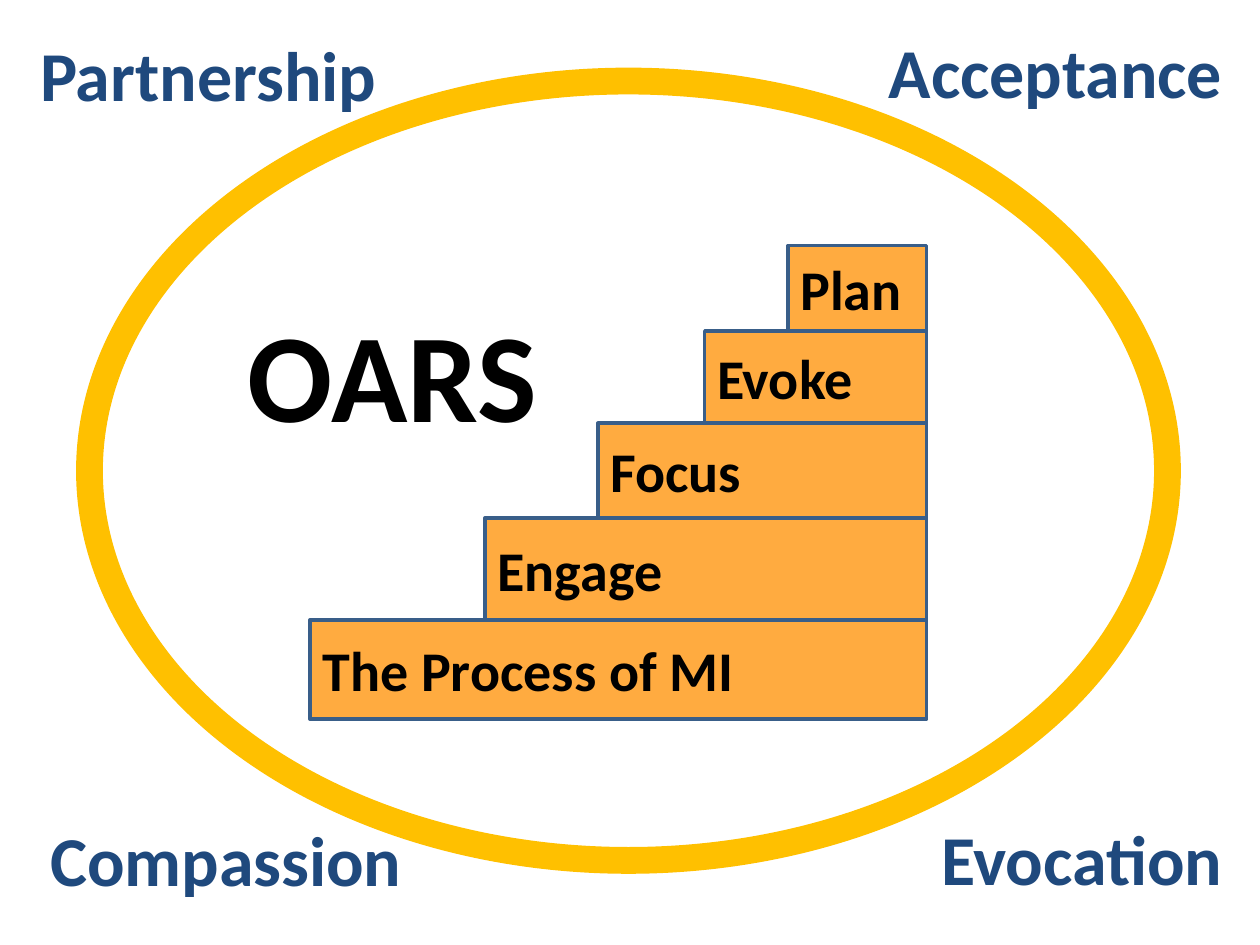
from pptx import Presentation
from pptx.dml.color import RGBColor
from pptx.enum.shapes import MSO_SHAPE as Shape
from pptx.enum.text import MSO_ANCHOR as Anchor, PP_ALIGN as Align
from pptx.util import Cm, Pt

BLACK, NAVY, ORANGE, GOLD, EDGE = "000000", "1F497D", "FFAB40", "FFC000", "395E89"


def color(value):
    return RGBColor.from_string(value)


def write(shape, text, size, ink, align=Align.LEFT, anchor=Anchor.MIDDLE):
    frame = shape.text_frame
    frame.word_wrap = True
    frame.vertical_anchor = anchor
    para = frame.paragraphs[0]
    para.alignment = align
    span = para.add_run()
    span.text = text
    span.font.color.rgb = color(ink)
    for name, value in {"name": "Calibri", "size": Pt(size), "bold": True}.items():
        setattr(span.font, name, value)


def add_filled(parent, kind, box, fill, line):
    shape = parent.shapes.add_shape(kind, *map(Cm, box))
    shape.shadow.inherit = False
    shape.fill.solid()
    shape.fill.fore_color.rgb = color(fill)
    shape.line.color.rgb = color(line)
    shape.line.width = Pt(2)
    return shape


def add_label(parent, box, text, size, ink, **layout):
    write(parent.shapes.add_textbox(*map(Cm, box)), text, size, ink, **layout)


def add_staircase(page, box):
    """Stack the steps downwards, all flush with the right side of the box."""
    left, top, width, height = box
    steps = [  # text, share of the width, share of the height
        ("Plan", 0.225, 0.18),
        ("Evoke", 0.36, 0.195),
        ("Focus", 0.533, 0.2),
        ("Engage", 0.716, 0.215),
        ("The Process of MI", 1, 0.21),
    ]
    group = page.shapes.add_group_shape()
    for text, wide, high in steps:
        step_width, step_height = width * wide, height * high
        step_box = (left + width - step_width, top, step_width, step_height)
        step = add_filled(group, Shape.RECTANGLE, step_box, ORANGE, EDGE)
        write(step, text, 32, BLACK)
        top += step_height


def add_spirit_ring(page, box):
    """Draw the ring, with one word at each corner around it."""
    left, top, width, height = box
    group = page.shapes.add_group_shape()
    ring = add_filled(group, Shape.DONUT, box, GOLD, GOLD)
    ring.adjustments[0] = 0.029
    corners = [  # text, offset from the ring's box, width, alignment
        ("Partnership", -1.01, -0.89, 8.38, Align.LEFT),
        ("Compassion", -0.81, height - 1.25, 9.17, Align.LEFT),
        ("Evocation", width - 6.7, height - 1.27, 7.82, Align.RIGHT),
        ("Acceptance", width - 7.59, -0.94, 8.71, Align.RIGHT),
    ]
    for text, across, down, label_width, align in corners:
        label_box = (left + across, top + down, label_width, 1.96)
        add_label(group, label_box, text, 40, NAVY, align=align, anchor=Anchor.TOP)


def main():
    deck = Presentation()
    deck.slide_width, deck.slide_height = Cm(25.4), Cm(19.05)
    page = deck.slides.add_slide(deck.slide_layouts[6])
    add_staircase(page, (6.25, 4.95, 12.43, 9.55))
    add_spirit_ring(page, (1.57, 1.4, 22.2, 16.18))
    add_label(page, (4.75, 6.53, 6.63, 1.93), "OARS", 72, BLACK)
    deck.save("out.pptx")


if __name__ == "__main__":
    main()
